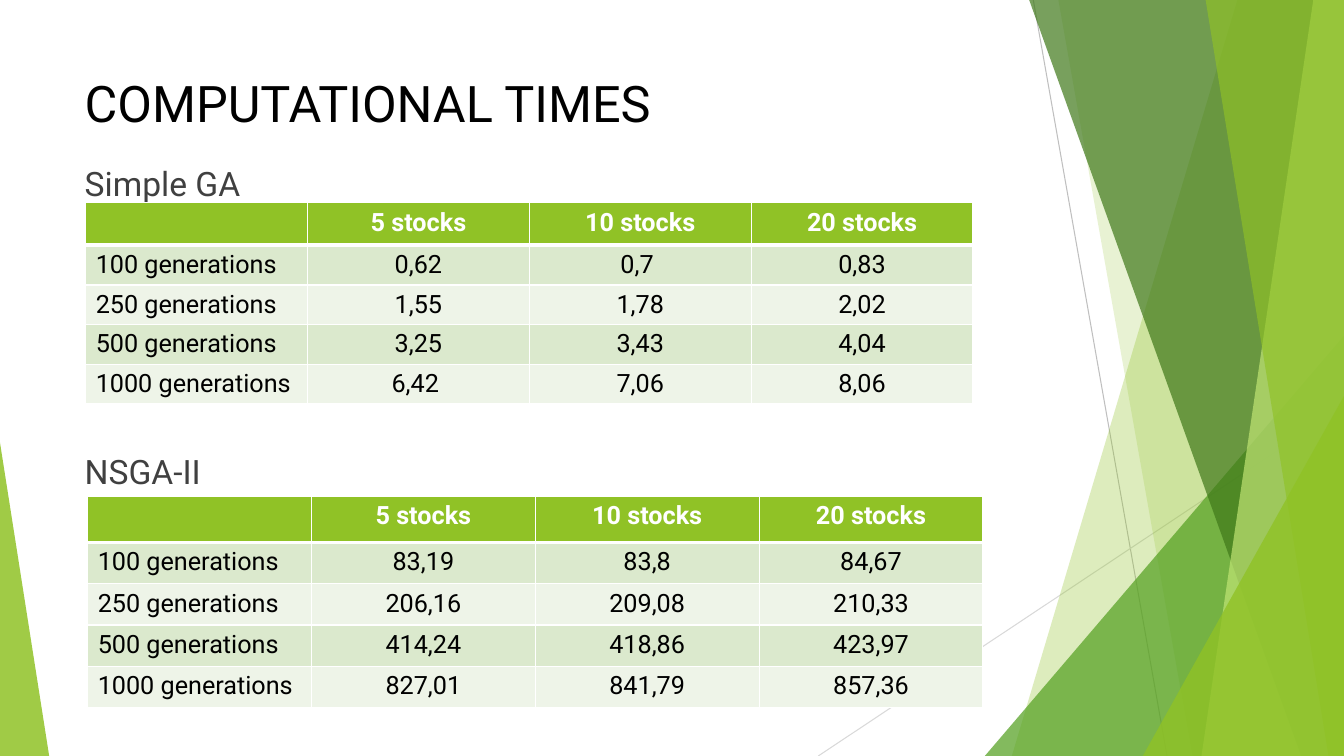
from lxml.etree import SubElement
from pptx import Presentation
from pptx.dml.color import RGBColor
from pptx.enum.shapes import MSO_CONNECTOR, MSO_SHAPE
from pptx.enum.text import MSO_ANCHOR, MSO_AUTO_SIZE, PP_ALIGN
from pptx.oxml.ns import qn
from pptx.util import Cm, Pt

FONT = "Roboto"
WHITE = RGBColor(0xFF, 0xFF, 0xFF)
BLACK = RGBColor(0x00, 0x00, 0x00)
GREY = RGBColor(0x40, 0x40, 0x40)
LINE_GREY = RGBColor(0xBF, 0xBF, 0xBF)
LIGHT_GREY = RGBColor(0xD9, 0xD9, 0xD9)
LIME = RGBColor(0x90, 0xC2, 0x26)
PALE_LIME = RGBColor(0xC0, 0xE4, 0x74)
GREEN = RGBColor(0x54, 0xA0, 0x21)
DARK_GREEN = RGBColor(0x3F, 0x78, 0x19)
BAND_DARK = RGBColor(0xDB, 0xE9, 0xCD)
BAND_LIGHT = RGBColor(0xEE, 0xF4, 0xE8)

WIDTH, HEIGHT = 33.87, 19.05
TOP = -0.02

HEADER = ["", "5 stocks", "10 stocks", "20 stocks"]
GENERATIONS = [100, 250, 500, 1000]
SIMPLE_GA_TIMES = [
    ["0,62", "0,7 ", "0,83"],
    ["1,55", "1,78", "2,02"],
    ["3,25", "3,43", "4,04"],
    ["6,42 ", "7,06", "8,06"],
]
NSGA_TIMES = [
    ["83,19", "83,8", "84,67"],
    ["206,16", "209,08", "210,33"],
    ["414,24", "418,86", "423,97"],
    ["827,01", "841,79", "857,36"],
]


def write_text(frame, text, size=18, color=BLACK, bold=False,
               align=PP_ALIGN.LEFT, before=0):
    para = frame.paragraphs[0]
    para.alignment = align
    para.space_before = Pt(before)
    span = para.add_run()
    span.text = text
    span.font.name = FONT
    span.font.size = Pt(size)
    span.font.bold = bold
    span.font.color.rgb = color


def place_text(box, text, left, top, width, height, anchor, **text_format):
    box.left, box.top, box.width, box.height = map(Cm, (left, top, width, height))
    frame = box.text_frame
    frame.word_wrap = True
    frame.auto_size = MSO_AUTO_SIZE.NONE
    frame.vertical_anchor = anchor
    write_text(frame, text, **text_format)


def paint(shape, color, opacity):
    shape.shadow.inherit = False
    shape.line.fill.background()
    shape.fill.solid()
    shape.fill.fore_color.rgb = color
    tint = shape.element.spPr.find(qn("a:solidFill"))[0]
    SubElement(tint, qn("a:alpha"), val=str(opacity * 1000))


def add_thin_line(page, start, end, color):
    line = page.shapes.add_connector(MSO_CONNECTOR.STRAIGHT, *map(Cm, start + end))
    line.line.color.rgb = color
    line.line.width = Pt(0.75)
    SubElement(line.element.spPr, qn("a:effectLst"))


def add_shard(page, top_left, bottom_left, color, opacity):
    """A full-height panel with a slanted left side, flush with the right edge."""
    builder = page.shapes.build_freeform(Cm(top_left), Cm(TOP))
    corners = [(WIDTH, TOP), (WIDTH, HEIGHT), (bottom_left, HEIGHT)]
    builder.add_line_segments([(Cm(x), Cm(y)) for x, y in corners], close=True)
    paint(builder.convert_to_shape(), color, opacity)


def add_triangle(page, left, top, width, apex, color, opacity):
    """A triangle that stands on the bottom edge of the slide."""
    triangle = page.shapes.add_shape(
        MSO_SHAPE.ISOSCELES_TRIANGLE, Cm(left), Cm(top), Cm(width), Cm(HEIGHT - top))
    triangle.adjustments[0] = apex
    paint(triangle, color, opacity)


def add_borders(cell, top=1, bottom=1):
    properties = cell._tc.get_or_add_tcPr()
    for side, points in (("L", 1), ("R", 1), ("T", top), ("B", bottom)):
        border = SubElement(properties, qn("a:ln" + side), w=str(Pt(points)))
        fill = SubElement(border, qn("a:solidFill"))
        SubElement(fill, qn("a:srgbClr"), val=str(WHITE))


def add_times_table(page, left, top, column_width, header_height, row_height, times):
    rows = [HEADER] + [[f"{count} generations"] + values
                       for count, values in zip(GENERATIONS, times)]
    table = page.shapes.add_table(
        len(rows), len(HEADER), Cm(left), Cm(top), Cm(column_width * len(HEADER)),
        Cm(header_height + row_height * len(times))).table
    for column in table.columns:
        column.width = Cm(column_width)
    for r, values in enumerate(rows):
        is_header = r == 0
        table.rows[r].height = Cm(header_height if is_header else row_height)
        band = LIME if is_header else BAND_DARK if r % 2 else BAND_LIGHT
        for c, value in enumerate(values):
            cell = table.cell(r, c)
            add_borders(cell, top=3 if r == 1 else 1, bottom=3 if is_header else 1)
            cell.fill.solid()
            cell.fill.fore_color.rgb = band
            write_text(cell.text_frame, value, bold=is_header,
                       color=WHITE if is_header else BLACK,
                       align=PP_ALIGN.CENTER if c else PP_ALIGN.LEFT)


def add_decoration(page):
    add_thin_line(page, (26.04, 0), (29.41, HEIGHT), LINE_GREY)
    add_thin_line(page, (WIDTH, 10.24), (20.62, HEIGHT), LIGHT_GREY)
    add_shard(page, 31.19, 25.5, LIME, 30)
    add_shard(page, 26.67, 30.05, LIME, 20)
    add_triangle(page, 24.82, 8.46, 9.05, 1, GREEN, 72)
    add_shard(page, 25.93, 32.79, DARK_GREEN, 70)
    add_shard(page, 33.1, 30.28, PALE_LIME, 70)
    add_shard(page, 30.38, 33.48, LIME, 65)
    add_triangle(page, 28.8, 9.98, 5.07, 1, LIME, 80)
    add_triangle(page, 0, 11.15, 1.24, 0, LIME, 85)


def main():
    deck = Presentation()
    deck.slide_width, deck.slide_height = Cm(WIDTH), Cm(HEIGHT)
    page = deck.slides.add_slide(deck.slide_layouts.get_by_name("Comparison"))
    title, first_label, first_content, second_label, second_content = page.placeholders
    for unused in (first_content, second_content):
        unused.element.getparent().remove(unused.element)

    # Green panels at the sides
    add_decoration(page)

    # Title and table labels
    place_text(title, "COMPUTATIONAL TIMES", 1.88, 1.7, 23.88, 1.55,
               MSO_ANCHOR.TOP, size=36)
    for label, text, top in ((first_label, "Simple GA", 3.66),
                             (second_label, "NSGA-II", 10.9)):
        place_text(label, text, 1.88, top, 11.63, 1.6, MSO_ANCHOR.BOTTOM,
                   size=24, color=GREY, before=10)

    # Tables of times
    add_times_table(page, 2.16, 5.11, 5.59, 1.07, 0.94, SIMPLE_GA_TIMES)
    add_times_table(page, 2.21, 12.5, 5.64, 1.17, 1.04, NSGA_TIMES)

    deck.save("out.pptx")


if __name__ == "__main__":
    main()
